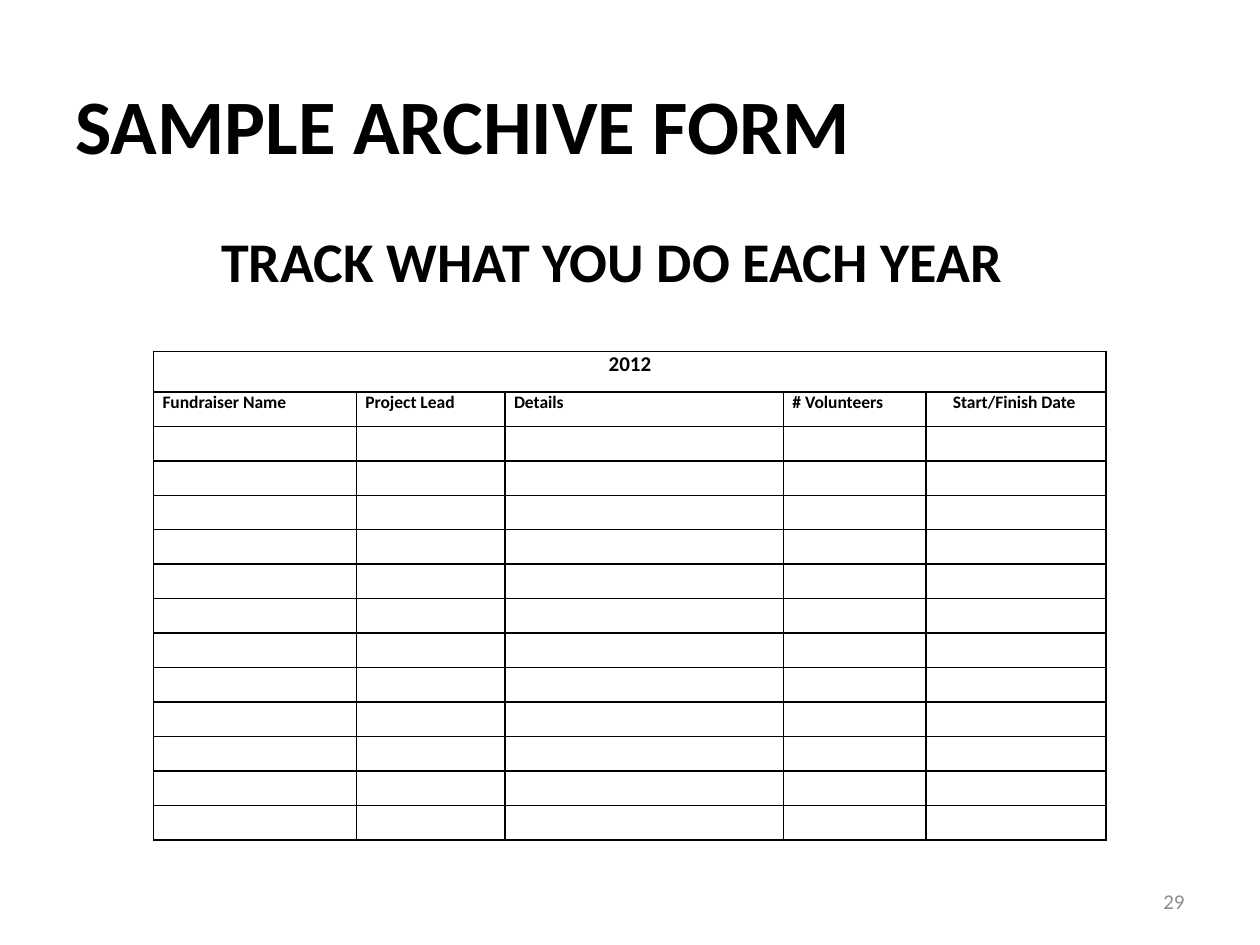
import pptx
import pptx.dml.color
import pptx.enum.text
import pptx.oxml
import pptx.oxml.ns
import pptx.util
from lxml import etree

Inches = pptx.util.Inches
Pt = pptx.util.Pt
Align = pptx.enum.text.PP_ALIGN
Anchor = pptx.enum.text.MSO_ANCHOR
qn = pptx.oxml.ns.qn

BLACK = pptx.dml.color.RGBColor(0x00, 0x00, 0x00)
GRAY = pptx.dml.color.RGBColor(0x8C, 0x8C, 0x8C)
WHITE = pptx.dml.color.RGBColor(0xFF, 0xFF, 0xFF)
FONT = "Calibri"

HEADINGS = ["Fundraiser Name", "Project Lead", "Details", "# Volunteers", "Start/Finish Date "]
COLUMN_WIDTHS = [1.61, 1.18, 2.21, 1.13, 1.43]
ENTRY_ROWS = 12
YEAR_ROW_HEIGHT = 0.32


def write(paragraph, text, size, color=BLACK, bold=True, align=Align.LEFT):
    paragraph.text = text
    paragraph.alignment = align
    for run in paragraph.runs:
        run.font.name = FONT
        run.font.size = Pt(size)
        run.font.bold = bold
        run.font.color.rgb = color


def add_line(slide, box, text, size, anchor=Anchor.TOP, **style):
    frame = slide.shapes.add_textbox(*(Inches(length) for length in box)).text_frame
    frame.word_wrap = True
    frame.vertical_anchor = anchor
    write(frame.paragraphs[0], text, size, **style)


def add_borders(cell):
    properties = cell._tc.get_or_add_tcPr()
    for position, side in enumerate(("lnL", "lnR", "lnT", "lnB")):
        border = pptx.oxml.parse_xml(
            f'<a:{side} {pptx.oxml.ns.nsdecls("a")} w="{Pt(1)}">'
            f'<a:solidFill><a:srgbClr val="{BLACK}"/></a:solidFill></a:{side}>'
        )
        properties.insert(position, border)


def format_cell(cell):
    cell.margin_left = cell.margin_right = Inches(0.07)
    cell.margin_top = cell.margin_bottom = Inches(0)
    cell.fill.solid()
    cell.fill.fore_color.rgb = WHITE
    add_borders(cell)


def add_archive_form(slide, box):
    left, top, width, height = box
    row_count = ENTRY_ROWS + 2
    form = slide.shapes.add_table(
        row_count, len(HEADINGS), *(Inches(length) for length in box)
    ).table
    form.first_row = form.horz_banding = False
    for column, column_width in zip(form.columns, COLUMN_WIDTHS):
        column.width = Inches(column_width)
    for row in form.rows:
        row.height = Inches((height - YEAR_ROW_HEIGHT) / (row_count - 1))
        for cell in row.cells:
            format_cell(cell)
    form.rows[0].height = Inches(YEAR_ROW_HEIGHT)

    year = form.cell(0, 0)
    year.merge(form.cell(0, len(HEADINGS) - 1))
    year_line = year.text_frame.paragraphs[0]
    write(year_line, "2012", 12, align=Align.CENTER)
    year_line.space_before = year_line.space_after = Pt(6)

    for index, heading in enumerate(HEADINGS):
        align = Align.CENTER if index == len(HEADINGS) - 1 else Align.LEFT
        write(form.cell(1, index).text_frame.paragraphs[0], heading, 10, align=align)
        for row_index in range(2, row_count):
            entry = form.cell(row_index, index).text_frame.paragraphs[0]
            etree.SubElement(entry._p, qn("a:endParaRPr"), sz="1000")


def main():
    deck = pptx.Presentation()
    deck.slide_width, deck.slide_height = Inches(10), Inches(7.5)
    slide = deck.slides.add_slide(deck.slide_layouts[6])
    add_line(slide, (0.5, 0.51, 9, 0.94), "SAMPLE ARCHIVE FORM", 44, Anchor.MIDDLE)
    add_line(slide, (1.22, 1.75, 7.27, 0.6), "TRACK WHAT YOU DO EACH YEAR", 32,
             align=Align.CENTER)
    add_archive_form(slide, (1.22, 2.79, 7.56, 3.88))
    add_line(slide, (7.17, 6.95, 2.33, 0.4), "29", 12, Anchor.MIDDLE,
             color=GRAY, bold=False, align=Align.RIGHT)
    deck.save("out.pptx")


if __name__ == "__main__":
    main()
